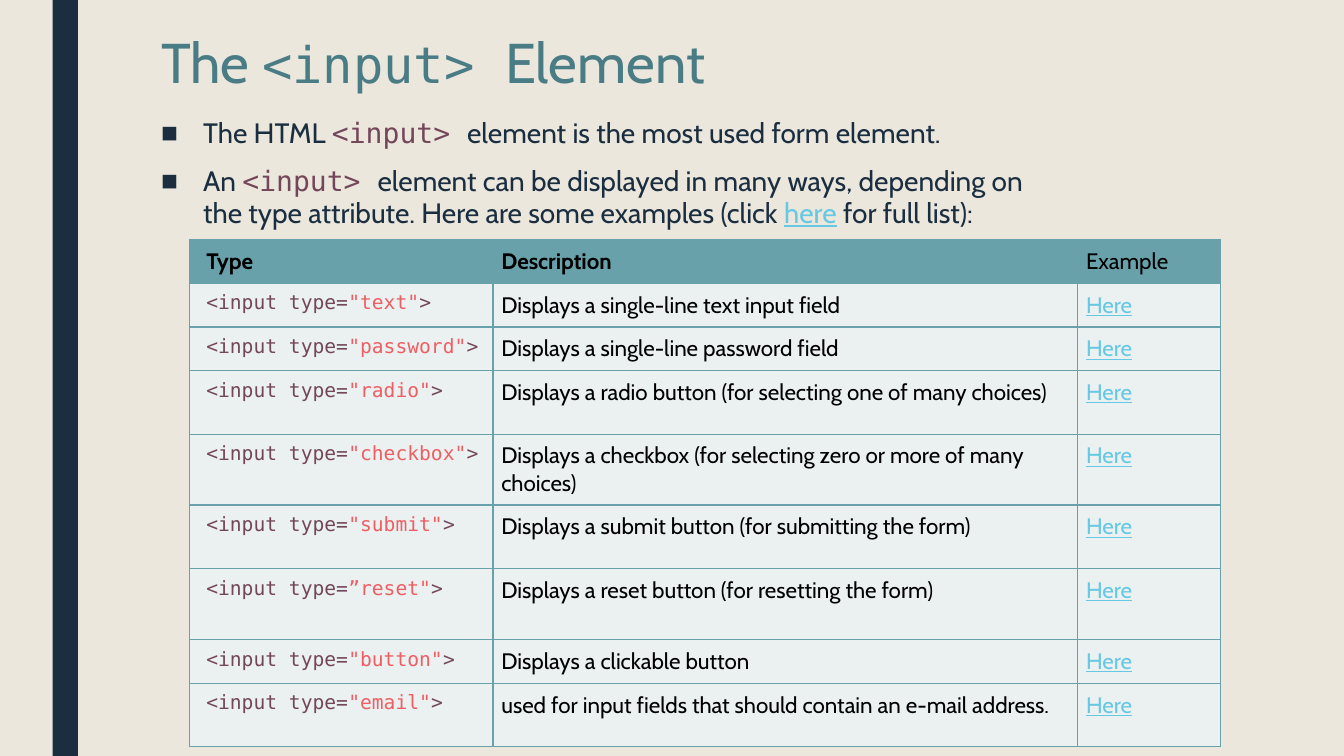
from dataclasses import dataclass

from lxml.etree import SubElement
from pptx import Presentation
from pptx.dml.color import RGBColor as Color
from pptx.enum.shapes import MSO_SHAPE as Preset
from pptx.enum.text import MSO_ANCHOR as Anchor, PP_ALIGN as Align
from pptx.oxml import parse_xml
from pptx.oxml.ns import nsdecls, qn
from pptx.util import Inches, Pt

PAGE_WIDTH, PAGE_HEIGHT = Inches(13.33), Inches(7.5)
NBSP = chr(160)


@dataclass(frozen=True)
class Theme:
    background: str = "EBE7DD"
    navy: str = "1A2E40"
    title: str = "4A7C85"
    code: str = "73465A"
    value: str = "EF5E63"
    link: str = "66C8E3"
    black: str = "000000"
    header: str = "69A1AB"
    cell: str = "EBF0F1"
    sans: str = "Cabin"
    mono: str = "DejaVu Sans Mono"
    title_size: int = 40
    title_code_size: int = 36
    body_size: int = 20
    table_size: int = 16
    table_code_size: int = 14


THEME = Theme()


@dataclass(frozen=True)
class Span:
    text: str
    size: int
    color: str
    font: str = THEME.sans
    bold: bool = False
    underline: bool = False


@dataclass(frozen=True)
class Box:
    """Place and size in percent of the slide."""
    left: float
    top: float
    width: float
    height: float

    def place(self) -> tuple:
        return across(self.left), down(self.top), across(self.width), down(self.height)


@dataclass(frozen=True)
class InputRow:
    value: str
    description: str
    height: float


def across(percent: float) -> int:
    return round(PAGE_WIDTH * percent / 100)


def down(percent: float) -> int:
    return round(PAGE_HEIGHT * percent / 100)


# Slide regions and table grid, in percent of the slide
BAR = Box(3.92, 0, 1.88, 100)
TITLE = Box(11.25, 4, 78.75, 14.8)
BODY = Box(11.25, 14.93, 78.75, 72.27)
TABLE = Box(14.1, 31.7, 76.75, 66.8)
COLUMNS = (22.58, 43.51, 10.65)
SHORT, MIDDLE, TALL = 5.73, 8.4, 9.39

INPUT_ROWS = [
    InputRow('"text"', "Displays a single-line text input field", SHORT),
    InputRow('"password"', "Displays a single-line password field", SHORT),
    InputRow('"radio"', "Displays a radio button (for selecting one of many choices)", MIDDLE),
    InputRow('"checkbox"', "Displays a checkbox (for selecting zero or more of many choices)", TALL),
    InputRow('"submit"', "Displays a submit button (for submitting the form)", MIDDLE),
    InputRow('”reset"', "Displays a reset button (for resetting the form)", TALL),
    InputRow('"button"', "Displays a clickable button", SHORT),
    InputRow('"email"', "used for input fields that should contain an e-mail address.", MIDDLE),
]


def body_span(text: str) -> Span:
    return Span(text, THEME.body_size, THEME.navy)


def table_span(text: str, bold: bool = False) -> Span:
    return Span(text, THEME.table_size, THEME.black, bold=bold)


def table_code(text: str, color: str = THEME.code) -> Span:
    return Span(text, THEME.table_code_size, color, THEME.mono)


BODY_CODE = Span(f"<input>{NBSP}", THEME.body_size, THEME.code, THEME.mono)
BULLETS = [
    [body_span(f"The HTML{NBSP}"), BODY_CODE,
     body_span("element is the most used form element.")],
    [body_span(f"An{NBSP}"), BODY_CODE,
     body_span("element can be displayed in many ways, depending on "
               f"the{NBSP}type{NBSP}attribute. Here are some examples (click "),
     Span("here", THEME.body_size, THEME.link, underline=True),
     body_span(" for full list):")],
]


def write(para, spans: list[Span]) -> None:
    para.alignment = Align.LEFT
    for span in spans:
        run = para.add_run()
        run.text = span.text
        font = run.font
        font.name, font.size = span.font, Pt(span.size)
        font.bold, font.underline = span.bold, span.underline
        font.color.rgb = Color.from_string(span.color)


def add_text_frame(page, box: Box):
    frame = page.shapes.add_textbox(*box.place()).text_frame
    frame.word_wrap = True
    frame.vertical_anchor = Anchor.TOP
    return frame


def add_bullet(para) -> None:
    properties = para._p.get_or_add_pPr()
    properties.set("marL", str(Pt(30)))
    properties.set("indent", str(-Pt(30)))
    SubElement(properties, qn("a:buFont"), typeface="Arial")
    SubElement(properties, qn("a:buChar"), char="■")


def fill_cell(cell, spans: list[Span], fill: str, first: bool) -> None:
    cell.margin_left = Pt(12 if first else 6)
    cell.margin_right = cell.margin_top = cell.margin_bottom = Pt(6)
    cell.vertical_anchor = Anchor.TOP
    cell.fill.solid()
    cell.fill.fore_color.rgb = Color.from_string(fill)
    write(cell.text_frame.paragraphs[0], spans)
    properties = cell._tc.get_or_add_tcPr()
    for index, side in enumerate(("lnL", "lnR", "lnT", "lnB")):
        properties.insert(index, parse_xml(
            f'<a:{side} {nsdecls("a")} w="{Pt(1)}"><a:solidFill>'
            f'<a:srgbClr val="{THEME.header}"/></a:solidFill></a:{side}>'))


def add_input_table(page) -> None:
    link = Span("Here", THEME.table_size, THEME.link, underline=True)
    header = [[table_span("Type", True)], [table_span("Description", True)],
              [table_span("Example")]]
    rows = [header] + [
        [[table_code("<input type="), table_code(row.value, THEME.value), table_code(">")],
         [table_span(row.description)], [link]] for row in INPUT_ROWS]
    heights = [SHORT] + [row.height for row in INPUT_ROWS]

    table = page.shapes.add_table(len(rows), len(COLUMNS), *TABLE.place()).table
    table.horz_banding = False
    for column, width in zip(table.columns, COLUMNS):
        column.width = across(width)
    for row_index, (cells, height) in enumerate(zip(rows, heights)):
        table.rows[row_index].height = down(height)
        fill = THEME.cell if row_index else THEME.header
        for column_index, spans in enumerate(cells):
            fill_cell(table.cell(row_index, column_index), spans, fill, column_index == 0)


def main() -> None:
    deck = Presentation()
    deck.slide_width, deck.slide_height = PAGE_WIDTH, PAGE_HEIGHT
    page = deck.slides.add_slide(deck.slide_layouts[6])
    page.background.fill.solid()
    page.background.fill.fore_color.rgb = Color.from_string(THEME.background)

    # Side bar
    bar = page.shapes.add_shape(Preset.RECTANGLE, *BAR.place())
    bar.shadow.inherit = False
    bar.fill.solid()
    bar.fill.fore_color.rgb = Color.from_string(THEME.navy)
    bar.line.fill.background()

    # Bullets
    frame = add_text_frame(page, BODY)
    for index, spans in enumerate(BULLETS):
        para = frame.add_paragraph() if index else frame.paragraphs[0]
        para.line_spacing = 0.94
        para.space_before, para.space_after = Pt(10), Pt(2)
        add_bullet(para)
        write(para, spans)

    # Title
    para = add_text_frame(page, TITLE).paragraphs[0]
    para.line_spacing = 0.89
    write(para, [Span("The ", THEME.title_size, THEME.title),
                 Span("<input> ", THEME.title_code_size, THEME.title, THEME.mono),
                 Span("Element", THEME.title_size, THEME.title)])

    # Table of input types
    add_input_table(page)
    deck.save("out.pptx")


if __name__ == "__main__":
    main()
